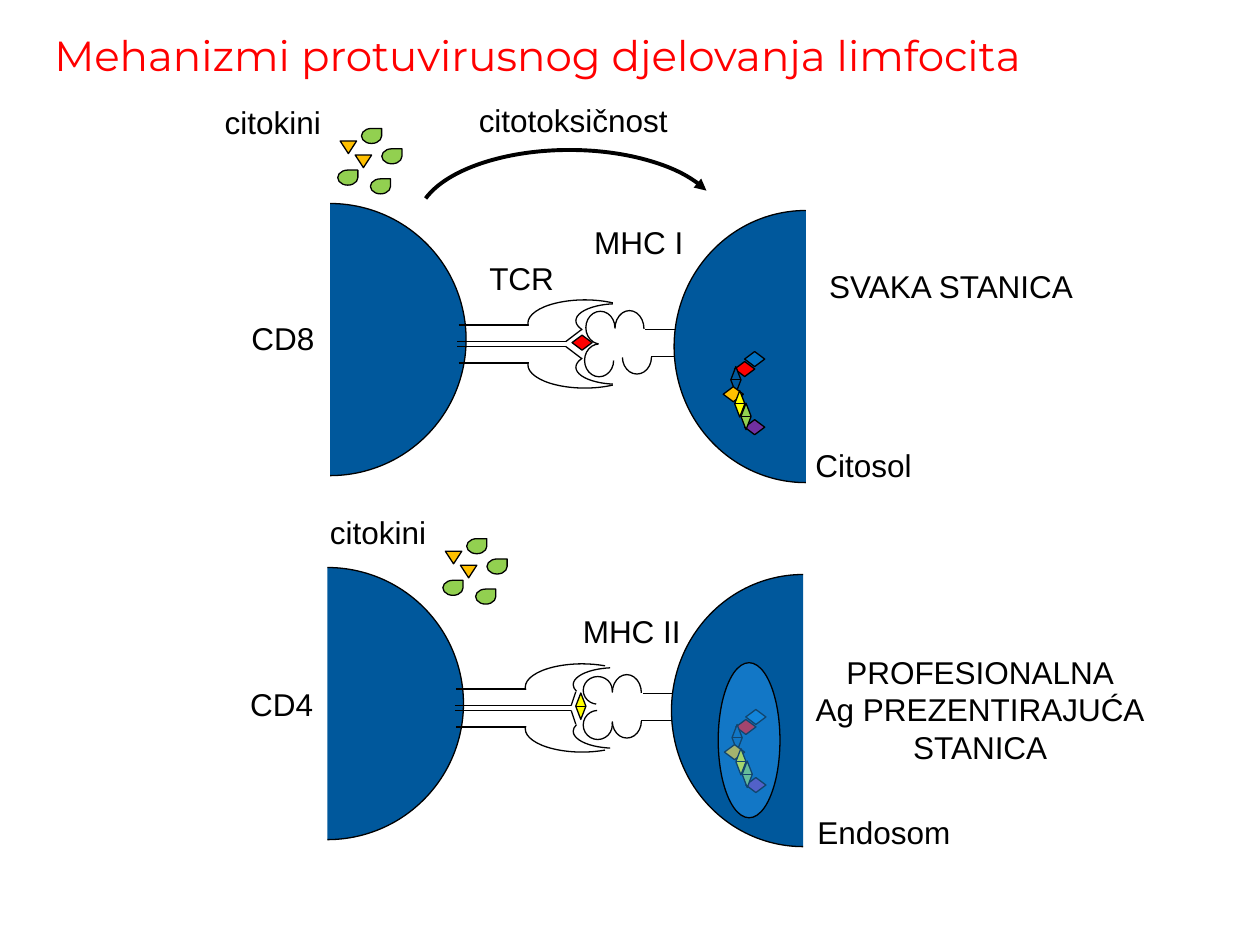
from dataclasses import dataclass
from typing import NamedTuple

from lxml.etree import SubElement
from pptx import Presentation
from pptx.dml.color import RGBColor
from pptx.enum.shapes import MSO_CONNECTOR, MSO_SHAPE
from pptx.enum.text import MSO_ANCHOR, MSO_AUTO_SIZE, PP_ALIGN
from pptx.oxml.ns import qn
from pptx.util import Pt

BLACK, RED, YELLOW, ORANGE, GREEN = "000000", "FF0000", "FFFF00", "FFC000", "92D050"
CELL_BLUE, BLUE, PURPLE, ENDOSOME_BLUE = "00589C", "0070C0", "7030A0", "2BA2FF"


class Box(NamedTuple):
    left: float
    top: float
    width: float
    height: float

    def moved(self, dx: float, dy: float) -> "Box":
        return Box(self.left + dx, self.top + dy, self.width, self.height)

    def mirrored(self) -> "Box":
        """The same box reflected in the horizontal axis y = 0."""
        return Box(self.left, -self.top - self.height, self.width, self.height)


class Angles(NamedTuple):
    """Start and end of an arc in units of 0.6 degree."""
    start: float
    end: float


class Piece(NamedTuple):
    kind: MSO_SHAPE
    box: Box
    fill: str


class Label(NamedTuple):
    text: str
    box: Box


@dataclass
class Contact:
    """A T cell meeting another cell; the axis runs through the receptor."""
    left: float
    axis: float
    fork_x: float
    tip: tuple[float, float]
    outer: Angles
    lip: Angles
    upper_groove: tuple[Box, Angles]
    lower_groove: tuple[Box, Angles]
    lower_arc_left: float


HALF_CELL = Angles(162, 54)
MHC_ARC = Angles(108.89, 0)
CONTACTS = [
    Contact(110.9, 196.6, 212.4, (221.6, 8.4), Angles(106.38, 194.5), Angles(99.3, 152.8),
            (Box(223.9, -18.7, 16.6, 18.7), Angles(57.83, 0)),
            (Box(223.2, 0, 16.6, 18.7), Angles(0.36, 160.53)), 244.8),
    Contact(109.4, 404.6, 217, (219.6, 9.2), Angles(106.38, 190.16), Angles(102.1, 152.8),
            (Box(223.9, -18, 16.6, 15.8), Angles(57.83, 2.53)),
            (Box(223.9, 1.4, 16.6, 16.6), Angles(210.63, 160.53)), 240.5),
]

TEARDROPS = [(211.7, 102.2), (206.6, 73.4), (218.2, 85), (193, 97.2)]
TRIANGLES = [(194.4, 80.6), (203, 88.6)]
CYTOKINES = (
    [Piece(MSO_SHAPE.TEAR, Box(x, y, 11.5, 8.6), GREEN) for x, y in TEARDROPS]
    + [Piece(MSO_SHAPE.FLOWCHART_MERGE, Box(x, y, 9.4, 7.2), ORANGE) for x, y in TRIANGLES]
)
CYTOKINE_LABEL = Label("citokini", Box(121, 55.4, 69.8, 28.8))
CYTOKINE_OFFSETS = [(0, 0), (60.1, 234.4)]


def diamond(left: float, top: float, fill: str) -> Piece:
    return Piece(MSO_SHAPE.DIAMOND, Box(left, top, 11.5, 8.6), fill)


def spindle(left: float, top: float, fill: str) -> Piece:
    return Piece(MSO_SHAPE.FLOWCHART_SORT, Box(left, top, 5.8, 15.1), fill)


PEPTIDE = [
    diamond(419.8, 206.6, RED), spindle(417.6, 209.5, CELL_BLUE),
    diamond(413.3, 221, ORANGE), diamond(425.5, 200.9, BLUE),
    diamond(425.5, 239.8, PURPLE), spindle(419.8, 223.2, YELLOW),
    spindle(423.4, 230.4, GREEN),
]
PEPTIDE_OFFSETS = [(0, 0), (0.7, 204.5)]
PRESENTED = [diamond(326.9, 191.5, RED), spindle(329, 396, YELLOW)]

LABELS = [
    Label("CD8", Box(136.1, 178.6, 51.1, 28.8)),
    Label("CD4", Box(135.4, 388.1, 51.1, 28.8)),
    Label("MHC I", Box(331.9, 123.8, 66.2, 28.8)),
    Label("MHC II", Box(325.4, 346.3, 71.3, 28.8)),
    Label("TCR", Box(272.2, 144.7, 51.8, 28.8)),
    Label("citotoksičnost", Box(265.7, 54, 123.8, 28.8)),
    Label("SVAKA STANICA", Box(465.8, 149, 155.5, 28.8)),
    Label("PROFESIONALNA\nAg PREZENTIRAJUĆA\nSTANICA", Box(457.9, 369.4, 204.5, 72.7)),
    Label("Citosol", Box(458.6, 251.3, 69.8, 28.8)),
    Label("Endosom", Box(459.4, 460.8, 91.4, 28.8)),
]


def color(value: str) -> RGBColor:
    return RGBColor.from_string(value)


def add_piece(slide, kind: MSO_SHAPE, box: Box, fill: str | None = None, weight: float = 0.75):
    shape = slide.shapes.add_shape(kind, *map(Pt, box))
    shape.shadow.inherit = False
    if fill:
        shape.fill.solid()
        shape.fill.fore_color.rgb = color(fill)
    else:
        shape.fill.background()
    shape.line.color.rgb = color(BLACK)
    shape.line.width = Pt(weight)
    return shape


def add_arc(slide, box: Box, angles: Angles, flip: str = "", fill: str | None = None,
            weight: float = 0.75):
    shape = add_piece(slide, MSO_SHAPE.ARC, box, fill, weight)
    shape.adjustments[0], shape.adjustments[1] = angles
    if flip:
        shape._element.spPr.find(qn("a:xfrm")).set(flip, "1")
    return shape


def add_line(slide, x1: float, y1: float, x2: float, y2: float) -> None:
    line = slide.shapes.add_connector(MSO_CONNECTOR.STRAIGHT, Pt(x1), Pt(y1), Pt(x2), Pt(y2))
    line.line.color.rgb = color(BLACK)
    line.line.width = Pt(0.75)
    SubElement(line._element.spPr, qn("a:effectLst"))


def add_label(slide, label: Label) -> None:
    frame = slide.shapes.add_textbox(*map(Pt, label.box)).text_frame
    frame.text = label.text
    frame.word_wrap = False
    frame.auto_size = MSO_AUTO_SIZE.SHAPE_TO_FIT_TEXT
    for paragraph in frame.paragraphs:
        paragraph.alignment = PP_ALIGN.CENTER
        paragraph.font.name, paragraph.font.size = "Arial", Pt(18)
        paragraph.font.color.rgb = color(BLACK)


def add_contact(slide, contact: Contact) -> None:
    x, y = contact.left, contact.axis

    def arc(box: Box, angles: Angles, flip: str = "", fill: str | None = None) -> None:
        add_arc(slide, box.moved(x, y), angles, flip, fill)

    def line(x1: float, y1: float, x2: float, y2: float) -> None:
        add_line(slide, x + x1, y + y1, x + x2, y + y2)

    arc(Box(0, -80.3, 155.5, 155.5), HALF_CELL, fill=CELL_BLUE)
    arc(Box(274.3, -76.3, 150.5, 155.5), HALF_CELL, "flipH", CELL_BLUE)

    tip_x, tip_y = contact.tip
    outer, lip = Box(190.8, -25.2, 65, 26.6), Box(218.2, -23, 47.5, 19.4)
    for side, flip in ((-1, ""), (1, "flipV")):
        line(151.2, side * 10.8, 190.8, side * 10.8)
        line(150.5, side * 1.4, contact.fork_x, side * 1.4)
        line(contact.fork_x, side * 1.4, tip_x, side * tip_y)
        arc(outer.mirrored() if flip else outer, contact.outer, flip)
        arc(lip.mirrored() if flip else lip, contact.lip, flip)

    line(275, -8.3, 257.8, -8.3)
    arc(Box(240.5, -19.1, 16.6, 20.9), MHC_ARC)
    arc(*contact.upper_groove)
    arc(*contact.lower_groove)
    line(274.7, 7.2, contact.lower_arc_left + 16.6, 7.2)
    arc(Box(contact.lower_arc_left, -2.2, 16.6, 19.4), MHC_ARC, "flipV")


def add_pieces(slide, pieces: list[Piece], dx: float = 0, dy: float = 0) -> None:
    for piece in pieces:
        add_piece(slide, piece.kind, piece.box.moved(dx, dy), piece.fill)


def add_title(slide, text: str) -> None:
    title = slide.shapes.title
    title.left, title.top, title.width, title.height = map(Pt, Box(31, 16.6, 662.4, 72.7))
    frame = title.text_frame
    frame.text = text
    frame.margin_left = frame.margin_top = frame.margin_right = frame.margin_bottom = 0
    frame.vertical_anchor, frame.auto_size = MSO_ANCHOR.TOP, MSO_AUTO_SIZE.NONE
    paragraph = frame.paragraphs[0]
    paragraph.alignment = PP_ALIGN.LEFT
    paragraph.font.name, paragraph.font.size = "Montserrat", Pt(24)
    paragraph.font.color.rgb = color(RED)


def main() -> None:
    presentation = Presentation()
    presentation.slide_width, presentation.slide_height = Pt(720), Pt(540)
    slide = presentation.slides.add_slide(presentation.slide_layouts[5])
    add_title(slide, "Mehanizmi protuvirusnog djelovanja limfocita")
    for contact in CONTACTS:
        add_contact(slide, contact)
    add_pieces(slide, PRESENTED)
    for dx, dy in CYTOKINE_OFFSETS:
        add_pieces(slide, CYTOKINES, dx, dy)
        add_label(slide, Label(CYTOKINE_LABEL.text, CYTOKINE_LABEL.box.moved(dx, dy)))
    for dx, dy in PEPTIDE_OFFSETS:
        add_pieces(slide, PEPTIDE, dx, dy)
    endosome = add_piece(slide, MSO_SHAPE.OVAL, Box(410.4, 378.7, 35.3, 88.6), ENDOSOME_BLUE)
    fill_color = endosome._element.spPr.find(qn("a:solidFill"))[0]
    SubElement(fill_color, qn("a:alpha"), val="43000")
    attack = add_arc(slide, Box(238.3, 85.7, 174.2, 82.8), Angles(113.68, 208.17), weight=2.25)
    SubElement(attack.line._get_or_add_ln(), qn("a:tailEnd"), type="triangle")
    for label in LABELS:
        add_label(slide, label)
    presentation.save("out.pptx")


if __name__ == "__main__":
    main()
